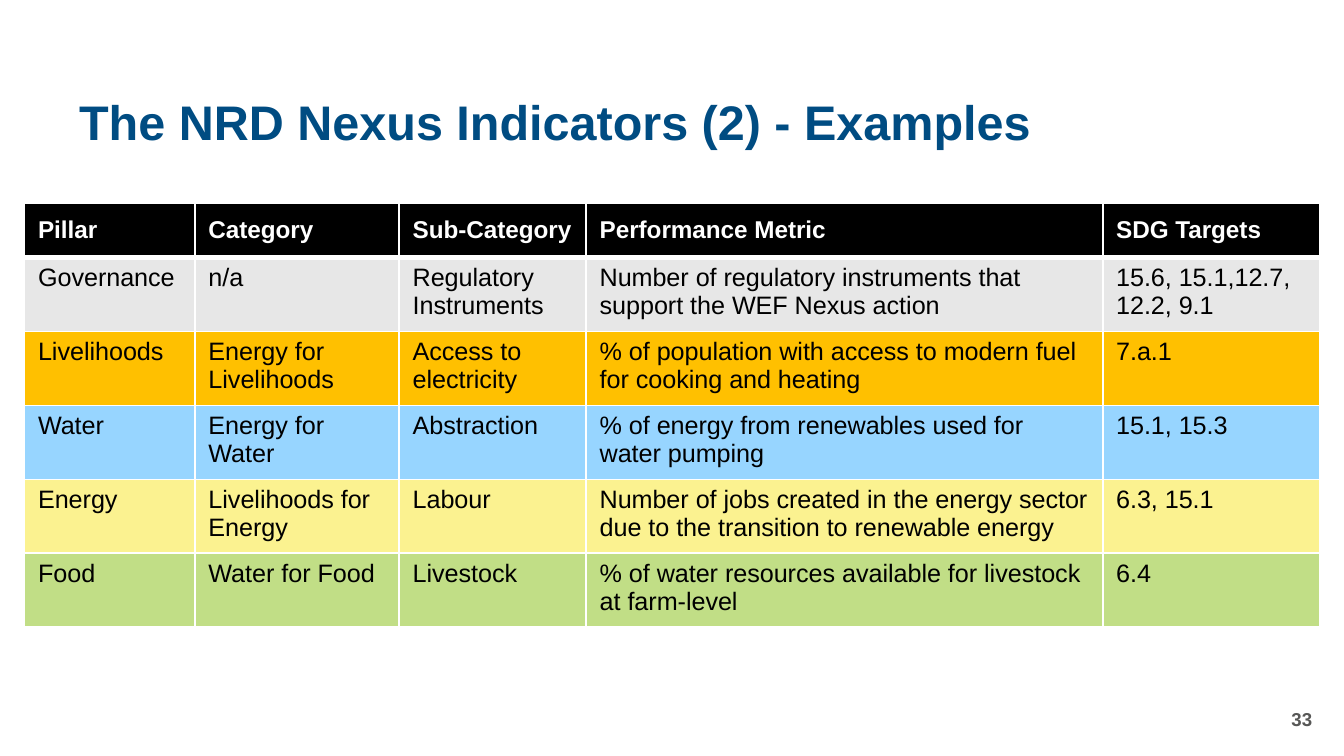
from lxml import etree
from pptx import Presentation
from pptx.dml.color import RGBColor
from pptx.enum.text import MSO_ANCHOR, PP_ALIGN
from pptx.oxml.ns import qn
from pptx.util import Pt

TOP, MIDDLE = MSO_ANCHOR.TOP, MSO_ANCHOR.MIDDLE
LEFT, RIGHT = PP_ALIGN.LEFT, PP_ALIGN.RIGHT

WHITE = RGBColor(0xFF, 0xFF, 0xFF)
BLACK = RGBColor(0x00, 0x00, 0x00)
NAVY = RGBColor(0x00, 0x4C, 0x82)
SLATE = RGBColor(0x57, 0x57, 0x56)
GREY = RGBColor(0xE7, 0xE7, 0xE7)
AMBER = RGBColor(0xFF, 0xC0, 0x00)
SKY = RGBColor(0x97, 0xD5, 0xFF)
YELLOW = RGBColor(0xFB, 0xF2, 0x90)
GREEN = RGBColor(0xC1, 0xDE, 0x86)

HEADINGS = ("Pillar", "Category", "Sub-Category", "Performance Metric", "SDG Targets")
INDICATORS = [
    (GREY, ("Governance", "n/a", "Regulatory Instruments",
            "Number of regulatory instruments that support the WEF Nexus action",
            "15.6, 15.1,12.7, 12.2, 9.1")),
    (AMBER, ("Livelihoods", "Energy for Livelihoods", "Access to electricity",
             "% of population with access to modern fuel for cooking and heating",
             "7.a.1")),
    (SKY, ("Water", "Energy for Water", "Abstraction",
           "% of energy from renewables used for water pumping", "15.1, 15.3")),
    (YELLOW, ("Energy", "Livelihoods for Energy", "Labour",
              "Number of jobs created in the energy sector due to the transition"
              " to renewable energy", "6.3, 15.1")),
    (GREEN, ("Food", "Water for Food", "Livestock",
             "% of water resources available for livestock at farm-level", "6.4")),
]
COLUMN_WIDTHS = (91.3, 109.4, 100.2, 276.7, 116.4)
HEADING_HEIGHT, INDICATOR_HEIGHT = 29.3, 37.3


def write_text(frame, text, size, color, bold=False, align=LEFT, spacing=1.0):
    """Write one formatted paragraph into a text frame."""
    frame.word_wrap = True
    paragraph = frame.paragraphs[0]
    paragraph.alignment = align
    paragraph.line_spacing = spacing
    run = paragraph.add_run()
    run.text = text
    run.font.name = "Arial"
    run.font.size = Pt(size)
    run.font.bold = bold
    run.font.color.rgb = color


def add_text(slide, box, text, **text_format):
    """Place a vertically centred line of text in the given box."""
    frame = slide.shapes.add_textbox(*map(Pt, box)).text_frame
    frame.vertical_anchor = MIDDLE
    write_text(frame, text, **text_format)


def set_borders(cell, **widths):
    """Give a cell white borders with widths in points, keyed by side."""
    properties = cell._tc.get_or_add_tcPr()
    for side in "LRTB":
        line = etree.SubElement(properties, qn(f"a:ln{side}"), w=str(Pt(widths.get(side, 1))))
        fill = etree.SubElement(line, qn("a:solidFill"))
        etree.SubElement(fill, qn("a:srgbClr"), val=str(WHITE))


def fill_row(cells, texts, fill, anchor, borders, **text_format):
    """Fill one table row with texts on a common background."""
    for cell, text in zip(cells, texts):
        set_borders(cell, **borders)
        cell.fill.solid()
        cell.fill.fore_color.rgb = fill
        cell.vertical_anchor = anchor
        write_text(cell.text_frame, text, **text_format)


def add_indicator_table(slide, left, top):
    """Place the table of indicators with its top left corner at the given point."""
    height = HEADING_HEIGHT + INDICATOR_HEIGHT * len(INDICATORS)
    table = slide.shapes.add_table(
        len(INDICATORS) + 1, len(HEADINGS),
        Pt(left), Pt(top), Pt(sum(COLUMN_WIDTHS)), Pt(height)).table
    for column, width in zip(table.columns, COLUMN_WIDTHS):
        column.width = Pt(width)
    heading_row, *indicator_rows = table.rows
    heading_row.height = Pt(HEADING_HEIGHT)
    fill_row(heading_row.cells, HEADINGS, BLACK, MIDDLE, {"B": 3},
             size=13, color=WHITE, bold=True)
    for index, (row, (fill, texts)) in enumerate(zip(indicator_rows, INDICATORS)):
        row.height = Pt(INDICATOR_HEIGHT)
        borders = {"T": 3} if index == 0 else {}
        fill_row(row.cells, texts, fill, TOP, borders, size=13.5, color=BLACK)


def main():
    """Build the slide and save it."""
    deck = Presentation()
    deck.slide_width, deck.slide_height = Pt(720), Pt(405)
    slide = deck.slides.add_slide(deck.slide_layouts[6])
    add_text(slide, (35.3, 45.4, 674.6, 42.5), "The NRD Nexus Indicators (2) - Examples",
             size=26, color=NAVY, bold=True, spacing=0.9)
    add_text(slide, (548, 374.4, 162, 21.6), "33",
             size=10, color=SLATE, bold=True, align=RIGHT)
    add_indicator_table(slide, 13.2, 108.7)
    deck.save("out.pptx")


if __name__ == "__main__":
    main()
